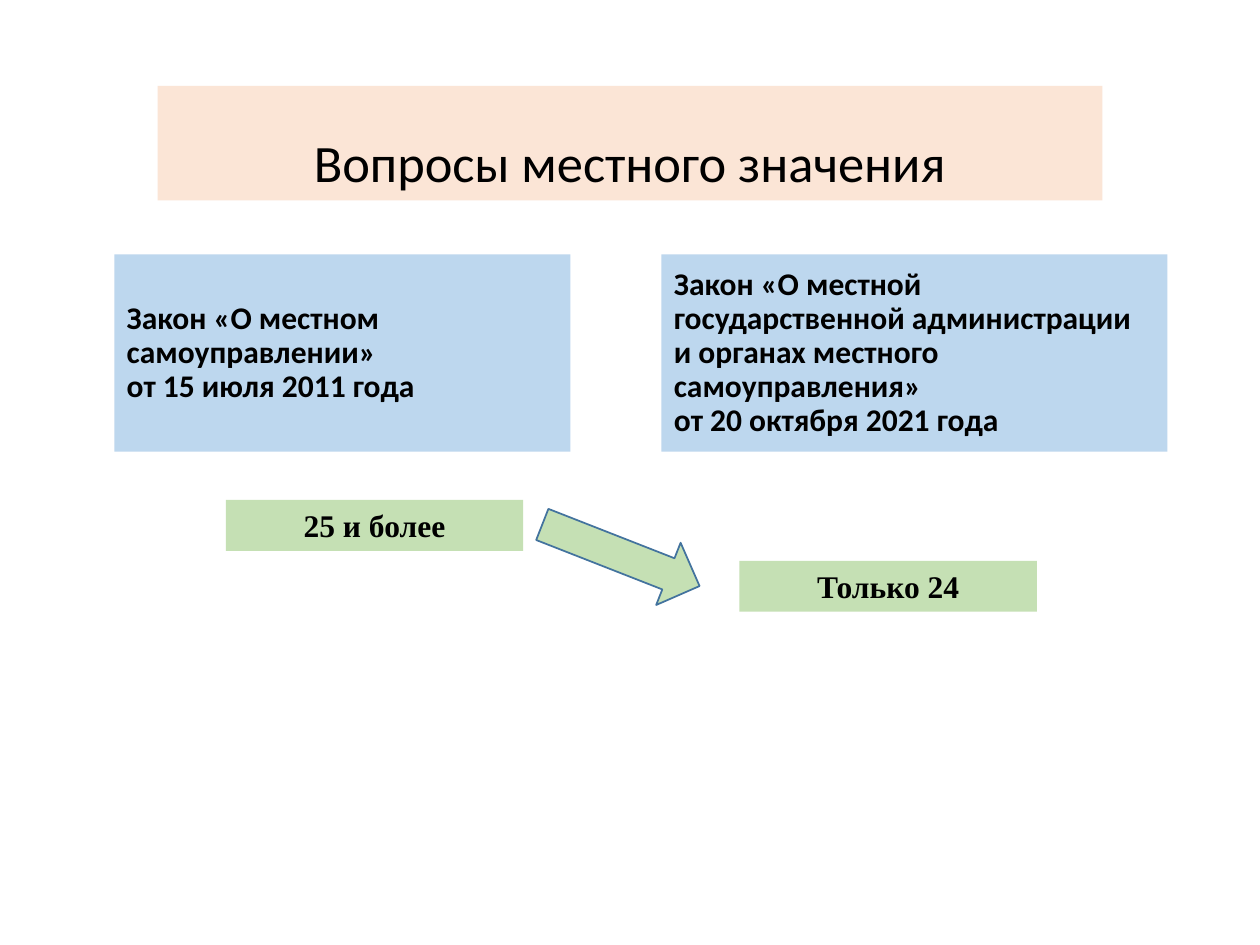
from dataclasses import dataclass
from pptx import Presentation
from pptx.dml.color import RGBColor as RGB
from pptx.enum.shapes import MSO_SHAPE as SHAPE
from pptx.enum.text import MSO_ANCHOR as ANCHOR, MSO_AUTO_SIZE as AUTO, PP_ALIGN as ALIGN
from pptx.util import Pt


@dataclass(frozen=True)
class Theme:
    """Colours, fonts and type sizes of the slide."""
    title_fill: RGB = RGB(0xFB, 0xE5, 0xD6)
    law_fill: RGB = RGB(0xBD, 0xD7, 0xEE)
    count_fill: RGB = RGB(0xC5, 0xE0, 0xB4)
    arrow_line: RGB = RGB(0x43, 0x73, 0x9E)
    text: RGB = RGB(0, 0, 0)
    sans: str = "Calibri"
    serif: str = "Times New Roman"
    title_size: int = 30
    body_size: int = 18


THEME = Theme()


def set_all(obj, values):
    """Set each attribute named in a dict of format values."""
    for name, value in values.items():
        setattr(obj, name, value)


def paint(sp, fill):
    """Give a shape a solid fill and no outline."""
    sp.fill.solid()
    sp.fill.fore_color.rgb = fill
    sp.line.fill.background()


def write(sp, lines, frame, para, font):
    """Write one paragraph per line with shared formats."""
    tf = sp.text_frame
    set_all(tf, {"word_wrap": True, "auto_size": AUTO.NONE, **frame})
    for i, line in enumerate(lines):
        p = tf.add_paragraph() if i else tf.paragraphs[0]
        set_all(p, para)
        r = p.add_run()
        r.text = line
        set_all(r.font, font)
        r.font.color.rgb = THEME.text


def add_shape(s, kind, box, fill):
    """Add a flat filled shape in the given box."""
    sp = s.shapes.add_shape(kind, *map(Pt, box))
    sp.shadow.inherit = False
    paint(sp, fill)
    return sp


def place_title(s, box, text):
    """Move and format the title placeholder."""
    sp = s.shapes.title
    set_all(sp, dict(zip(("left", "top", "width", "height"), map(Pt, box))))
    paint(sp, THEME.title_fill)
    write(sp, [text], {"vertical_anchor": ANCHOR.BOTTOM},
          {"alignment": ALIGN.CENTER, "line_spacing": 0.9},
          {"name": THEME.sans, "size": Pt(THEME.title_size)})


def add_law(s, box, lines):
    """Add a panel with the name and date of a law."""
    sp = add_shape(s, SHAPE.RECTANGLE, box, THEME.law_fill)
    write(sp, lines, {"vertical_anchor": ANCHOR.MIDDLE},
          {"alignment": ALIGN.LEFT, "line_spacing": 0.9},
          {"name": THEME.sans, "size": Pt(THEME.body_size), "bold": True})


def add_count(s, box, text):
    """Add a label with the number of issues."""
    sp = add_shape(s, SHAPE.RECTANGLE, box, THEME.count_fill)
    write(sp, [text], {"vertical_anchor": ANCHOR.TOP, "auto_size": AUTO.SHAPE_TO_FIT_TEXT},
          {"alignment": ALIGN.CENTER},
          {"name": THEME.serif, "size": Pt(THEME.body_size), "bold": True})


def add_arrow(s, box, angle):
    """Add the block arrow from the old count to the new one."""
    sp = add_shape(s, SHAPE.RIGHT_ARROW, box, THEME.count_fill)
    sp.rotation = angle
    sp.line.color.rgb = THEME.arrow_line
    sp.line.width = Pt(1)


def main():
    """Build the slide and save it."""
    prs = Presentation()
    set_all(prs, {"slide_width": Pt(720), "slide_height": Pt(540)})
    s = prs.slides.add_slide(prs.slide_layouts[5])
    place_title(s, (90, 49, 540, 65.5), "Вопросы местного значения")
    law_top, law_height = 145.3, 112.8
    add_law(s, (65.3, law_top, 260.6, law_height),
            ["Закон «О местном самоуправлении»", "от 15 июля 2011 года"])
    add_law(s, (378, law_top, 289.2, law_height),
            ["Закон «О местной государственной администрации и органах местного самоуправления»",
             "от 20 октября 2021 года"])
    count_size = (170, 29.08)
    add_count(s, (129, 285.7, *count_size), "25 и более")
    add_count(s, (422.5, 320.5, *count_size), "Только 24")
    add_arrow(s, (306.6, 298.2, 96.5, 38.2), 21.4)
    prs.save("out.pptx")


if __name__ == "__main__":
    main()
